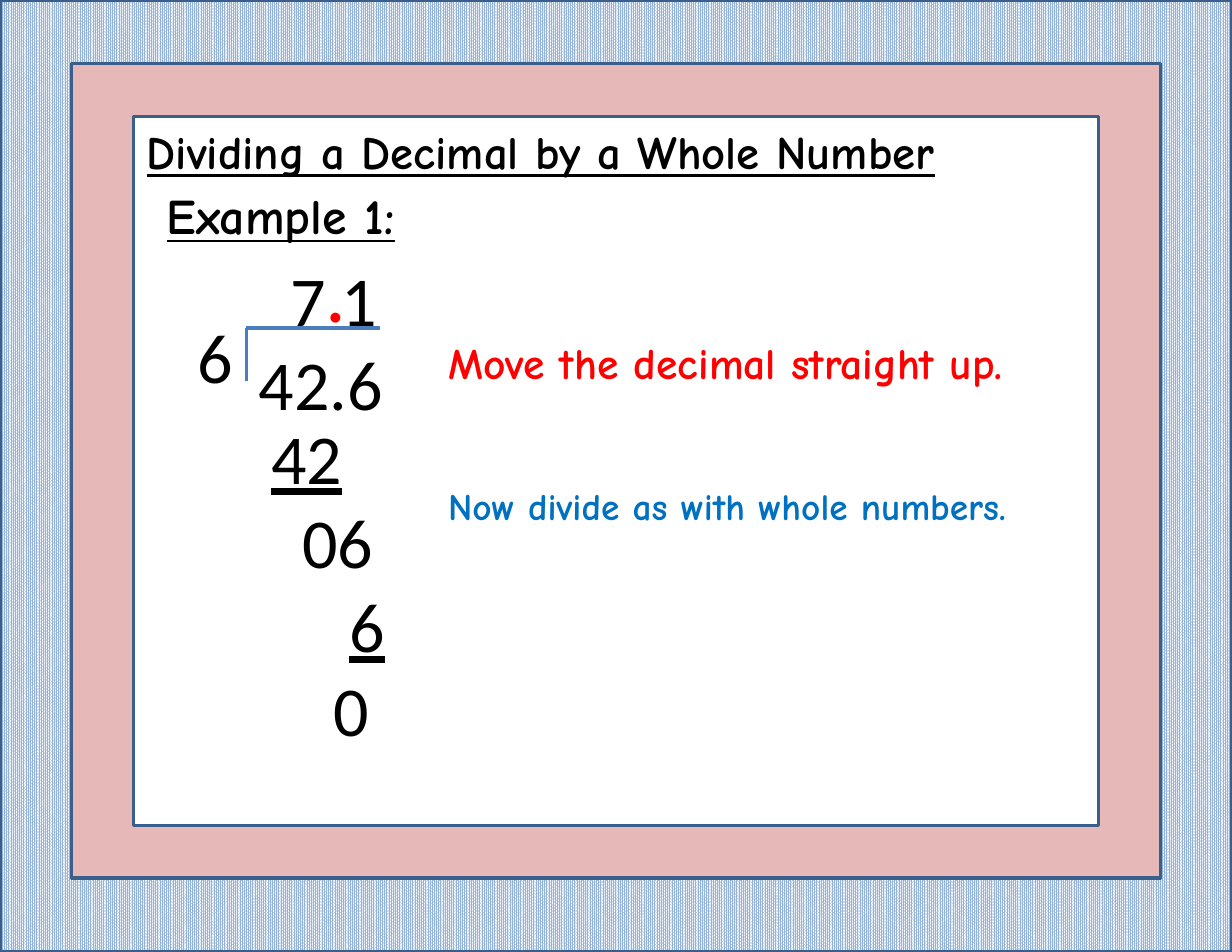
from lxml import etree
from pptx import Presentation
from pptx.dml.color import RGBColor
from pptx.enum.dml import MSO_PATTERN
from pptx.enum.shapes import MSO_CONNECTOR, MSO_SHAPE
from pptx.enum.text import MSO_ANCHOR, MSO_AUTO_SIZE, PP_ALIGN
from pptx.oxml.ns import qn
from pptx.util import Inches, Pt

RECTANGLE = MSO_SHAPE.RECTANGLE
STRAIGHT = MSO_CONNECTOR.STRAIGHT

BLACK = RGBColor(0x00, 0x00, 0x00)
WHITE = RGBColor(0xFF, 0xFF, 0xFF)
RED = RGBColor(0xFF, 0x00, 0x00)
BLUE = RGBColor(0x00, 0x70, 0xC0)
PALE_BLUE = RGBColor(0x95, 0xB3, 0xD7)
PINK = RGBColor(0xE6, 0xB9, 0xB8)
FRAME_LINE = RGBColor(0x3A, 0x5F, 0x8C)
BRACKET_LINE = RGBColor(0x4B, 0x7E, 0xBC)

HAND, DIGITS = "Comic Neue", "Calibri"
DIGIT_SIZE = 45
DIGIT_SPACE = 0.14  # width of one space at the digit size, inches

WIDTH, HEIGHT = 11, 8.5
BORDER = (0, 0, WIDTH, HEIGHT)
MAT = (0.64, 0.57, 9.72, 7.27)
PAGE = (1.19, 1.04, 8.62, 6.33)

TITLE = "Dividing a Decimal by a Whole Number"
TITLE_BOX = (1.2, 1.04, 8.62, 0.62)

# text, box, size, colour, underlined
NOTES = [
    ("Example 1:", (1.38, 1.59, 2.87, 0.64), 32, BLACK, True),
    ("Move the decimal straight up.", (3.89, 2.94, 6.12, 0.58), 28, RED, False),
    ("Now divide as with whole numbers.", (3.89, 4.25, 5.92, 0.52), 24, BLUE, False),
]

# Each row: digits, leading digit spaces, underlined
DIVISOR = [("6", 0, False)]
QUOTIENT_AND_DIVIDEND = [("7 1", 2, False), ("42.6", 0, False)]
WORKING = [("42", 0, True), ("06", 2, False), ("6", 5, True), ("0", 4, False)]
DIGIT_COLUMNS = [
    (DIVISOR, (1.65, 2.74, 1.93, 0.87)),
    (QUOTIENT_AND_DIVIDEND, (2.2, 2.23, 1.65, 3.9)),
    (WORKING, (2.31, 3.64, 1.38, 3.17)),
]

DECIMAL_POINT_BOX = (2.8, 2.08, 0.41, 1.03)
BRACKET_CORNER = (2.2, 2.93)
BRACKET_ENDS = [(2.2, 3.4), (3.39, 2.93)]


def inches(lengths):
    return [Inches(length) for length in lengths]


def add_frame(slide, box):
    frame = slide.shapes.add_shape(RECTANGLE, *inches(box))
    frame.shadow.inherit = False
    frame.line.color.rgb = FRAME_LINE
    frame.line.width = Pt(2)
    return frame.fill


def add_box(slide, box, wrap=True):
    text_frame = slide.shapes.add_textbox(*inches(box)).text_frame
    set_frame(text_frame, wrap)
    return text_frame


def set_frame(text_frame, wrap=True):
    text_frame.word_wrap = wrap
    text_frame.auto_size = MSO_AUTO_SIZE.NONE
    text_frame.vertical_anchor = MSO_ANCHOR.TOP
    text_frame.margin_left = text_frame.margin_right = Inches(0.11)
    text_frame.margin_top = text_frame.margin_bottom = Inches(0.06)


def set_font(paragraph, name, size, color, bold=False, underline=False):
    font = paragraph.font
    font.name, font.size, font.bold = name, Pt(size), bold
    font.underline = underline
    font.color.rgb = color


def add_tab_stop(paragraph, position):
    tabs = etree.SubElement(paragraph._p.get_or_add_pPr(), qn("a:tabLst"))
    etree.SubElement(tabs, qn("a:tab"), pos=str(Inches(position)), algn="l")


def add_digits(slide, rows, box):
    """Stack rows of digits; a tab sets each row in, so underlines span it."""
    text_frame = add_box(slide, box)
    for index, (digits, spaces, underlined) in enumerate(rows):
        row = text_frame.add_paragraph() if index else text_frame.paragraphs[0]
        if spaces:
            add_tab_stop(row, spaces * DIGIT_SPACE)
        row.add_run().text = "\t" + digits if spaces else digits
        set_font(row, DIGITS, DIGIT_SIZE, BLACK, underline=underlined)


def add_bracket_line(slide, end):
    line = slide.shapes.add_connector(STRAIGHT, *inches(BRACKET_CORNER + end))
    line.line.color.rgb = BRACKET_LINE
    line.line.width = Pt(2.25)
    etree.SubElement(line._element.spPr, qn("a:effectLst"))


def add_title(slide):
    title = slide.shapes.title
    title.left, title.top, title.width, title.height = inches(TITLE_BOX)
    title.text_frame.text = TITLE
    set_frame(title.text_frame)
    heading = title.text_frame.paragraphs[0]
    heading.alignment = PP_ALIGN.LEFT
    set_font(heading, HAND, 30, BLACK, bold=True, underline=True)
    slide.shapes._spTree.append(title._element)  # in front of the frames


def main():
    deck = Presentation()
    deck.slide_width, deck.slide_height = inches((WIDTH, HEIGHT))
    slide = deck.slides.add_slide(deck.slide_layouts[5])

    weave = add_frame(slide, BORDER)
    weave.patterned()
    weave.pattern = MSO_PATTERN.PERCENT_90
    weave.fore_color.rgb, weave.back_color.rgb = PALE_BLUE, WHITE
    for box, color in [(MAT, PINK), (PAGE, WHITE)]:
        fill = add_frame(slide, box)
        fill.solid()
        fill.fore_color.rgb = color

    add_title(slide)
    for end in BRACKET_ENDS:
        add_bracket_line(slide, end)
    for rows, box in DIGIT_COLUMNS:
        add_digits(slide, rows, box)

    decimal_point = add_box(slide, DECIMAL_POINT_BOX, wrap=False).paragraphs[0]
    decimal_point.text = "."
    set_font(decimal_point, DIGITS, 53, RED)

    for text, box, size, color, underlined in NOTES:
        note = add_box(slide, box).paragraphs[0]
        note.text = text
        set_font(note, HAND, size, color, bold=True, underline=underlined)

    deck.save("out.pptx")


if __name__ == "__main__":
    main()
